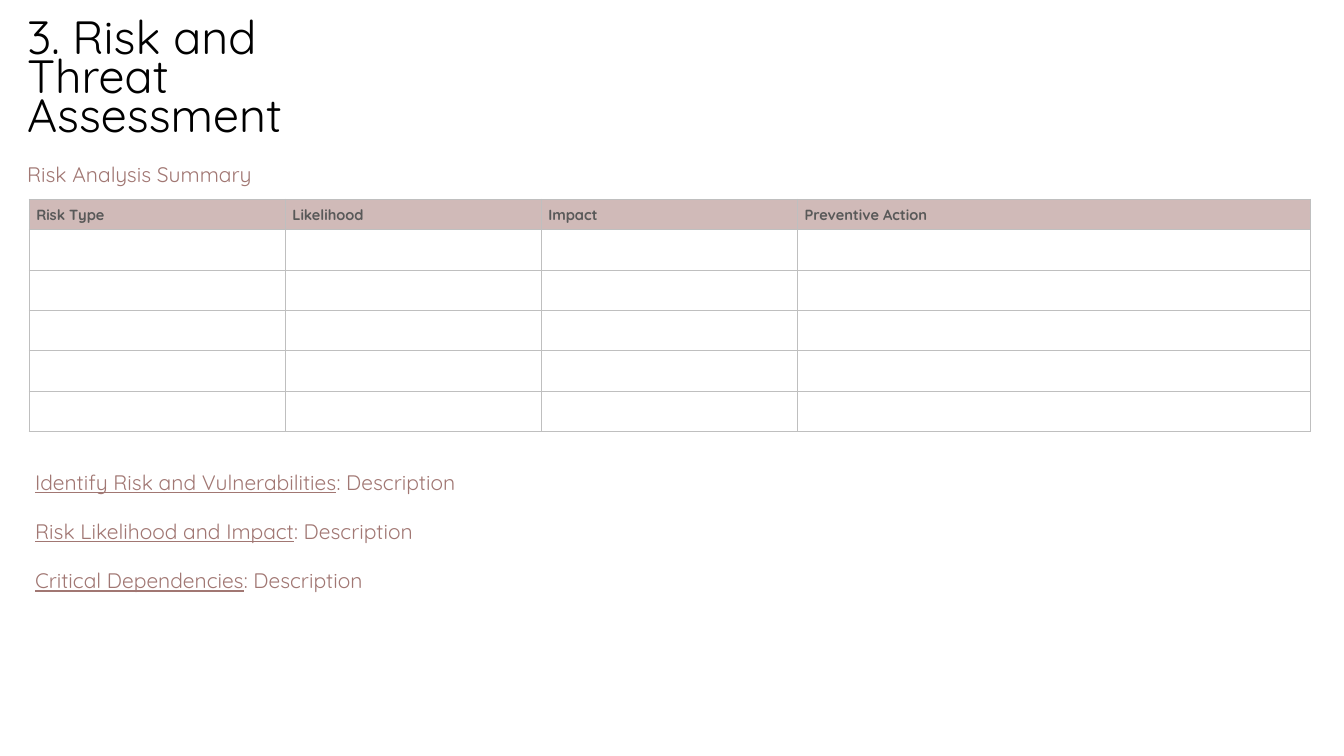
"""Build the risk and threat assessment slide."""
import pptx
import pptx.dml.color
import pptx.enum.text
import pptx.oxml
import pptx.oxml.ns
import pptx.util

Inches = pptx.util.Inches
Pt = pptx.util.Pt
ANCHOR = pptx.enum.text.MSO_ANCHOR

TITLE = "3. Risk and Threat Assessment"
SUMMARY = "Risk Analysis Summary"
HEADS = ["Risk Type", "Likelihood", "Impact", "Preventive Action"]
NOTES = ["Identify Risk and Vulnerabilities", "Risk Likelihood and Impact",
         "Critical Dependencies"]
DETAIL = ": Description"

COLS = [2.54, 2.54, 2.54, 5.09]
ROWS = [0.3] + [0.4] * 5

THEME = {
    "font": "Quicksand",
    "black": "000000", "rose": "A17773", "gray": "595959",
    "band": "D0BAB8", "rule": "BFBFBF",
    "title": 33.3, "body": 15, "head": 10.5,
}


def tint(name):
    return pptx.dml.color.RGBColor.from_string(THEME[name])


def add_run(para, text, size, color, bold=False, under=False):
    run = para.add_run()
    run.text = text
    font = run.font
    font.name = THEME["font"]
    font.size = Pt(THEME[size])
    font.color.rgb = tint(color)
    font.bold = bold
    font.underline = under


def add_box(slide, left, top, width, height, anchor=ANCHOR.MIDDLE):
    box = slide.shapes.add_textbox(*map(Inches, (left, top, width, height)))
    frame = box.text_frame
    frame.word_wrap = True
    frame.vertical_anchor = anchor
    return frame


def add_rules(cell):
    props = cell._tc.get_or_add_tcPr()
    for side in ("lnL", "lnR", "lnT", "lnB"):
        props.append(pptx.oxml.parse_xml(
            f'<a:{side} {pptx.oxml.ns.nsdecls("a")} w="{Pt(1)}"><a:solidFill>'
            f'<a:srgbClr val="{THEME["rule"]}"/></a:solidFill></a:{side}>'))


def add_grid(slide):
    frame = slide.shapes.add_table(
        len(ROWS), len(COLS), Inches(0.29), Inches(1.98),
        Inches(sum(COLS)), Inches(sum(ROWS)))
    table = frame.table
    table.horz_banding = False
    for col, width in zip(table.columns, COLS):
        col.width = Inches(width)
    for row, height in zip(table.rows, ROWS):
        row.height = Inches(height)
    for cell in table.iter_cells():
        add_rules(cell)
        cell.fill.background()
        cell.vertical_anchor = ANCHOR.MIDDLE
        cell.margin_left = cell.margin_right = Inches(0.07)
        cell.margin_top = cell.margin_bottom = 0
    for cell, text in zip(table.rows[0].cells, HEADS):
        cell.fill.solid()
        cell.fill.fore_color.rgb = tint("band")
        para = cell.text_frame.paragraphs[0]
        para.space_after = Pt(8)
        add_run(para, text, "head", "gray", bold=True)


def add_notes(slide):
    frame = add_box(slide, 0.25, 4.59, 12.82, 2, ANCHOR.TOP)
    frame.margin_top = Inches(0.07)
    for num, label in enumerate(NOTES):
        para = frame.add_paragraph() if num else frame.paragraphs[0]
        para.space_after = Pt(17)
        add_run(para, label, "body", "rose", under=True)
        add_run(para, DETAIL, "body", "rose")


def main():
    deck = pptx.Presentation()
    deck.slide_width, deck.slide_height = Inches(13.33), Inches(7.5)
    slide = deck.slides.add_slide(deck.slide_layouts[6])
    para = add_box(slide, 0.17, 0.15, 3.6, 1.32).paragraphs[0]
    para.line_spacing = 0.7
    para.space_after = Pt(6)
    add_run(para, TITLE, "title", "black")
    para = add_box(slide, 0.17, 1.55, 12.82, 0.35).paragraphs[0]
    add_run(para, SUMMARY, "body", "rose")
    add_notes(slide)
    add_grid(slide)
    deck.save("out.pptx")


if __name__ == "__main__":
    main()
